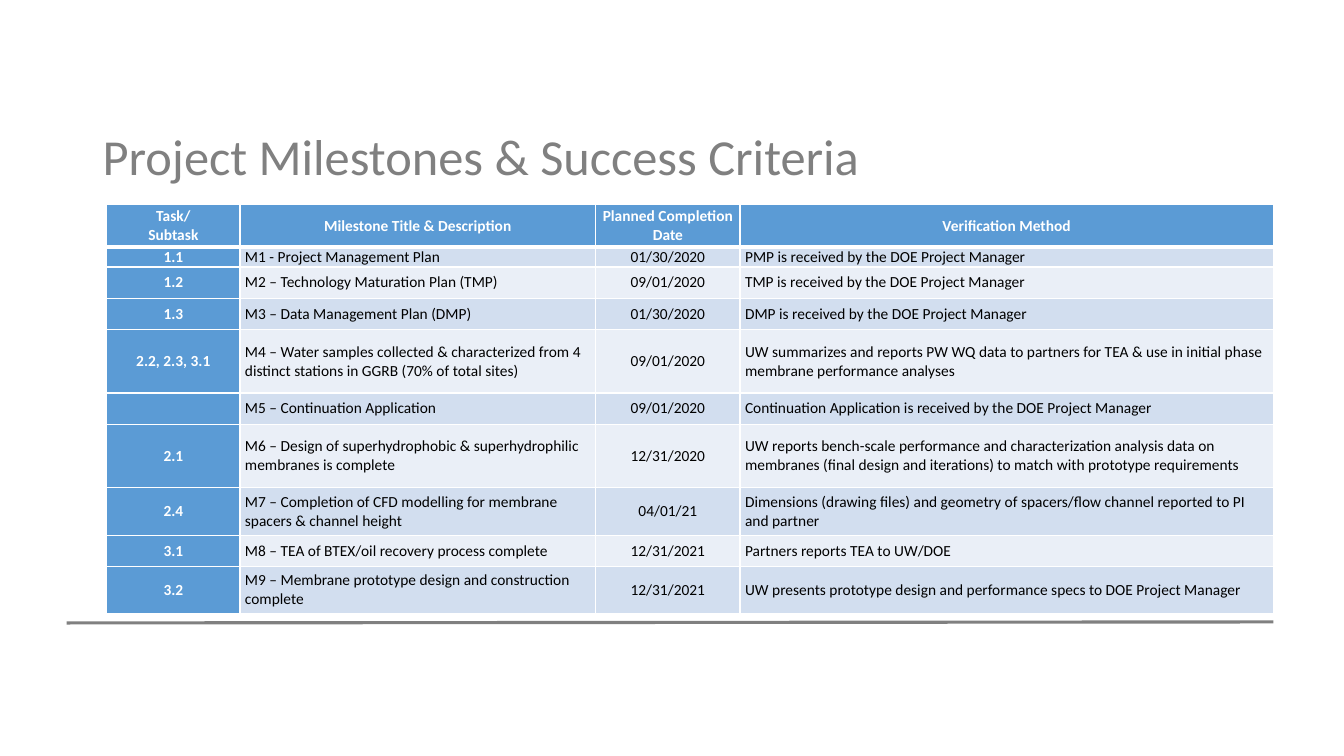
from dataclasses import dataclass

from lxml import etree
from pptx import Presentation
from pptx.dml.color import RGBColor
from pptx.enum.shapes import MSO_CONNECTOR
from pptx.enum.text import MSO_ANCHOR, PP_ALIGN
from pptx.oxml.ns import qn
from pptx.util import Inches, Pt

STRAIGHT = MSO_CONNECTOR.STRAIGHT
MIDDLE = MSO_ANCHOR.MIDDLE
LEFT, CENTER = PP_ALIGN.LEFT, PP_ALIGN.CENTER


@dataclass(frozen=True)
class Theme:
    font: str = "Calibri"
    gray: str = "808080"
    blue: str = "5B9BD5"
    bands: tuple = ("D2DEEF", "EAEFF7")
    white: str = "FFFFFF"
    black: str = "000000"
    title: float = 36
    body: float = 11
    rule: float = 2.25
    thin: float = 1
    thick: float = 3


THEME = Theme()
COLS = [1.32, 3.53, 1.43, 5.29]
HEIGHTS = [0.42, 0.2, 0.31, 0.31, 0.63, 0.31, 0.63, 0.47, 0.31, 0.47]
ROWS = [
    ("Task/\nSubtask", "Milestone Title & Description",
     "Planned Completion Date", "Verification Method"),
    ("1.1", "M1 - Project Management Plan", "01/30/2020",
     "PMP is received by the DOE Project Manager"),
    ("1.2", "M2 – Technology Maturation Plan (TMP)", "09/01/2020",
     "TMP is received by the DOE Project Manager"),
    ("1.3", "M3 – Data Management Plan (DMP)", "01/30/2020",
     "DMP is received by the DOE Project Manager"),
    ("2.2, 2.3, 3.1",
     "M4 – Water samples collected & characterized from 4 distinct stations "
     "in GGRB (70% of total sites)", "09/01/2020",
     "UW summarizes and reports PW WQ data to partners for TEA & use in "
     "initial phase membrane performance analyses"),
    ("", "M5 – Continuation Application", "09/01/2020",
     "Continuation Application is received by the DOE Project Manager"),
    ("2.1",
     "M6 – Design of superhydrophobic & superhydrophilic membranes is complete",
     "12/31/2020",
     "UW reports bench-scale performance and characterization analysis data on "
     "membranes (final design and iterations) to match with prototype "
     "requirements"),
    ("2.4",
     "M7 – Completion of CFD modelling for membrane spacers & channel height",
     "04/01/21",
     "Dimensions (drawing files) and geometry of spacers/flow channel "
     "reported to PI and partner"),
    ("3.1", "M8 – TEA of BTEX/oil recovery process complete", "12/31/2021",
     "Partners reports TEA to UW/DOE"),
    ("3.2", "M9 – Membrane prototype design and construction complete",
     "12/31/2021",
     "UW presents prototype design and performance specs to DOE Project Manager"),
]


def set_font(par, size, color, bold=False):
    font = par.font
    font.name = THEME.font
    font.size = Pt(size)
    font.bold = bold
    font.color.rgb = RGBColor.from_string(color)


def add_title(slide, text):
    box = slide.shapes.add_textbox(
        Inches(0.92), Inches(1.2), Inches(11.5), Inches(0.76))
    frame = box.text_frame
    frame.word_wrap = True
    frame.vertical_anchor = MIDDLE
    frame.text = text
    par = frame.paragraphs[0]
    par.line_spacing = 0.9
    set_font(par, THEME.title, THEME.gray)


def add_rule(slide):
    rule = slide.shapes.add_connector(
        STRAIGHT, Inches(0.66), Inches(6.18), Inches(12.63), Inches(6.17))
    rule.line.color.rgb = RGBColor.from_string(THEME.gray)
    rule.line.width = Pt(THEME.rule)
    etree.SubElement(rule._element.spPr, qn("a:effectLst"))


def add_edge(cell, side, width):
    props = cell._tc.get_or_add_tcPr()
    edge = etree.SubElement(props, qn("a:ln" + side), w=str(Pt(width)))
    fill = etree.SubElement(edge, qn("a:solidFill"))
    etree.SubElement(fill, qn("a:srgbClr"), val=THEME.white)


def fill_cell(cell, text, row, col):
    head = row == 0 or col == 0
    cell.margin_left = cell.margin_right = Inches(0.05)
    cell.margin_top = cell.margin_bottom = 0
    cell.vertical_anchor = MIDDLE
    for side in "LRTB":
        heavy = (row, side) in ((0, "B"), (1, "T"))
        add_edge(cell, side, THEME.thick if heavy else THEME.thin)
    cell.fill.solid()
    color = THEME.blue if head else THEME.bands[(row - 1) % 2]
    cell.fill.fore_color.rgb = RGBColor.from_string(color)
    cell.text = text
    for par in cell.text_frame.paragraphs:
        par.alignment = CENTER if head or col == 2 else LEFT
        set_font(par, THEME.body, THEME.white if head else THEME.black, head)


def add_grid(slide):
    frame = slide.shapes.add_table(
        len(ROWS), len(COLS), Inches(1.06), Inches(2.03),
        Inches(sum(COLS)), Inches(sum(HEIGHTS)))
    table = frame.table
    for col, width in zip(table.columns, COLS):
        col.width = Inches(width)
    for row, height in zip(table.rows, HEIGHTS):
        row.height = Inches(height)
    for row, texts in enumerate(ROWS):
        for col, text in enumerate(texts):
            fill_cell(table.cell(row, col), text, row, col)


def main():
    deck = Presentation()
    deck.slide_width = Inches(13.33)
    deck.slide_height = Inches(7.5)
    slide = deck.slides.add_slide(deck.slide_layouts[6])
    add_rule(slide)
    add_title(slide, "Project Milestones & Success Criteria")
    add_grid(slide)
    deck.save("out.pptx")


if __name__ == "__main__":
    main()
